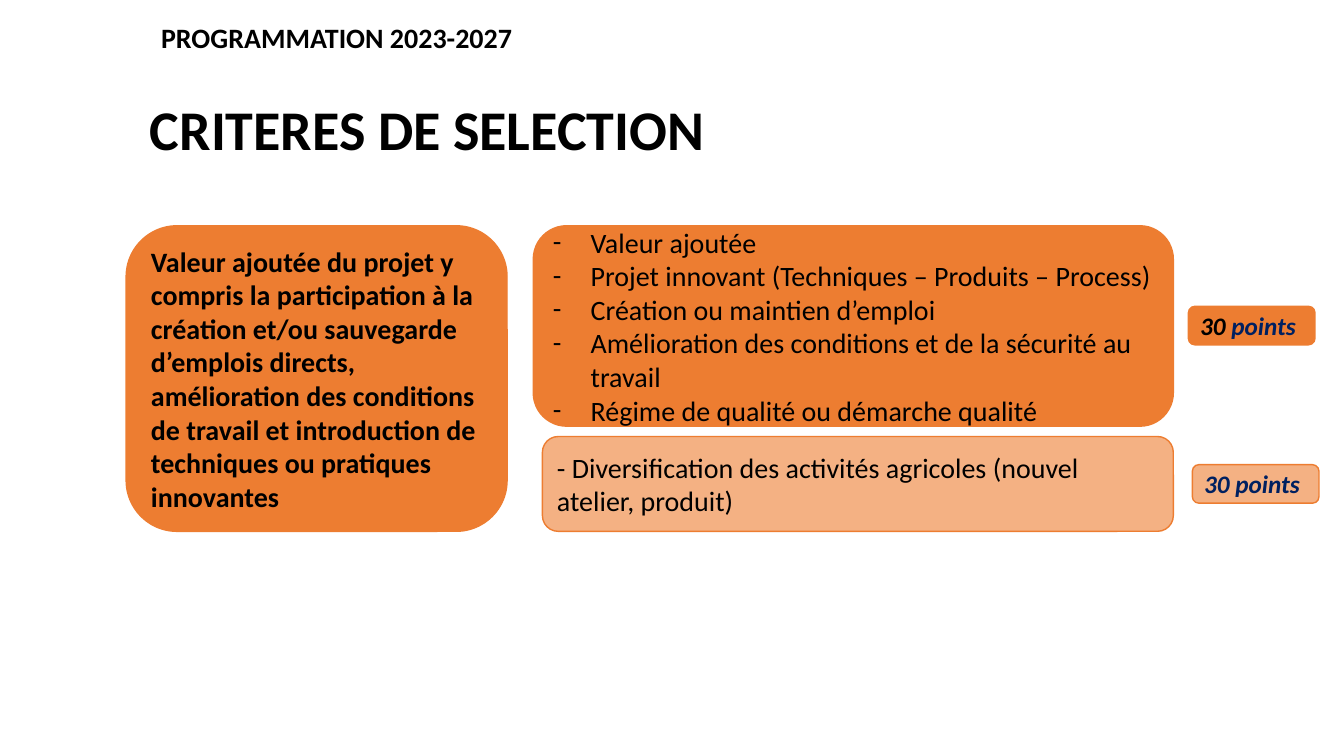
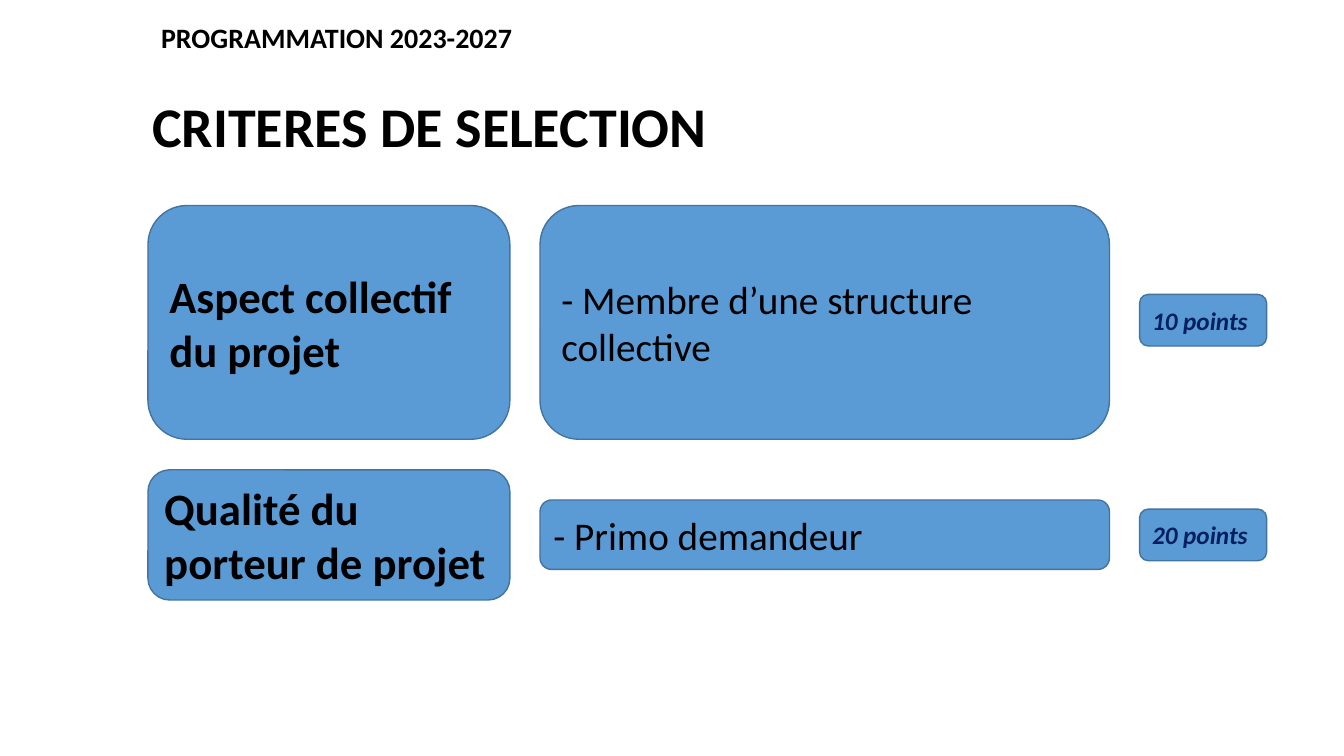
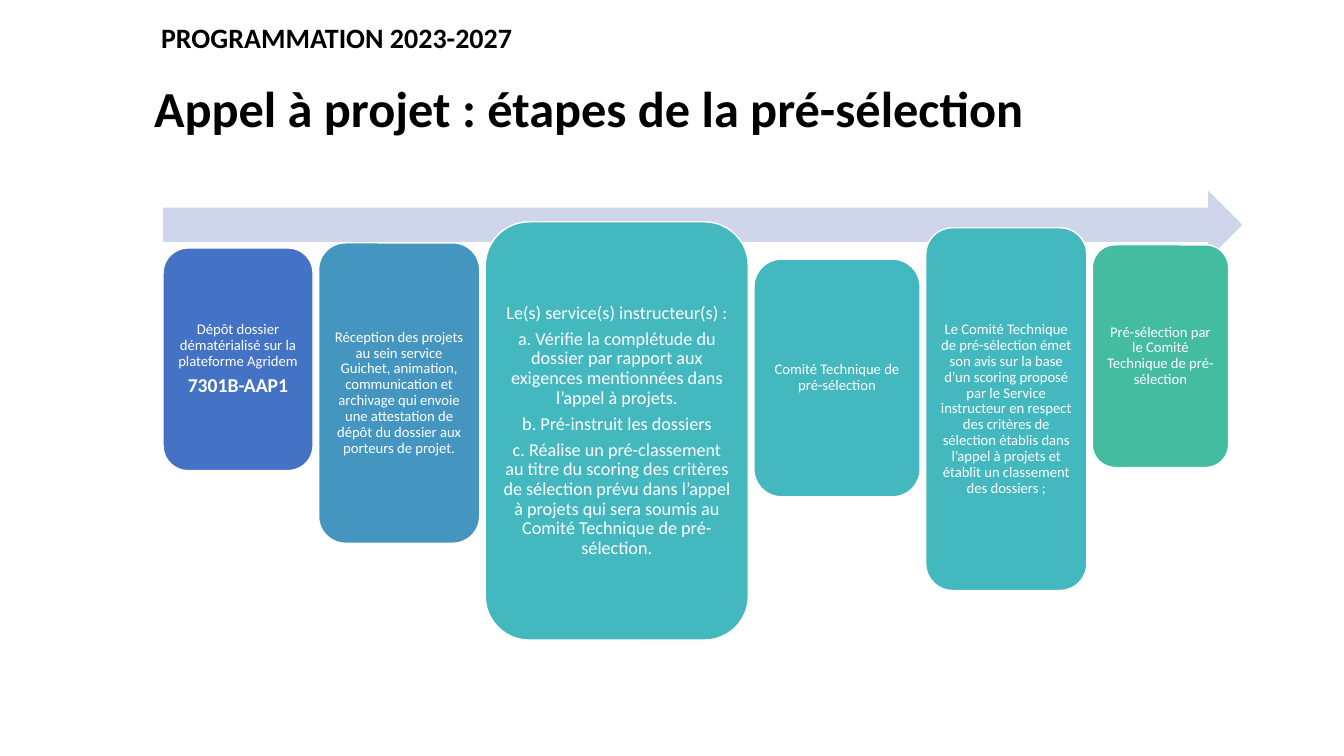
from pptx import Presentation
from pptx.dml.color import RGBColor
from pptx.enum.shapes import MSO_SHAPE
from pptx.enum.text import MSO_ANCHOR, MSO_AUTO_SIZE, PP_ALIGN
from pptx.oxml.ns import qn
from pptx.util import Cm, Pt
from lxml.etree import SubElement

FONT = "Calibri"
BLACK, WHITE, NAVY = "000000", "FFFFFF", "002060"
ORANGE, LIGHT_ORANGE = "ED7D31", "F4B183"
BLUE, DARK_BLUE = "5B9BD5", "43739E"
ARROW_GREY, TEAL = "CFD5EA", "43B8BF"

HEADER = "PROGRAMMATION 2023-2027"
CRITERIA_TITLE = "CRITERES DE SELECTION"

BODY = {"size": 20, "color": BLACK}
BOLD = {**BODY, "bold": True}
BADGE = {"size": 18, "color": NAVY, "bold": True, "italic": True}
STEP = {"size": 10.5, "color": WHITE}


def color(hex_value):
    return RGBColor.from_string(hex_value)


class Deck:
    """Holds the presentation, its shared style and the current slide."""

    def __init__(self):
        self.presentation = Presentation()
        self.presentation.slide_width = Cm(33.87)
        self.presentation.slide_height = Cm(19.05)
        self.slide = None

    def new_slide(self, title, box, size=40, align=PP_ALIGN.CENTER):
        layout = self.presentation.slide_layouts[5]
        self.slide = self.presentation.slides.add_slide(layout)
        self.header()
        placeholder = self.slide.shapes.title
        left, top, width, height = map(Cm, box)
        place = {"left": left, "top": top, "width": width, "height": height}
        for name, value in place.items():
            setattr(placeholder, name, value)
        self.fill_text(placeholder, [title], {**BOLD, "size": size}, align=align,
                       wrap=align != PP_ALIGN.CENTER)

    def header(self):
        shape = self.slide.shapes.add_textbox(Cm(3.81), Cm(0.38), Cm(9.8), Cm(1.12))
        self.fill_text(shape, [HEADER], BOLD)

    def fill_text(self, shape, paragraphs, style, align=PP_ALIGN.LEFT, wrap=True,
                  inset=None, spacing=None, bullet=None):
        """Each paragraph is a string or a list of (text, style changes) runs."""
        frame = shape.text_frame
        settings = {"auto_size": MSO_AUTO_SIZE.NONE, "word_wrap": wrap,
                    "vertical_anchor": MSO_ANCHOR.MIDDLE}
        if inset is not None:
            for side in ("left", "top", "right", "bottom"):
                settings[f"margin_{side}"] = Cm(inset)
        for name, value in settings.items():
            setattr(frame, name, value)
        for index, content in enumerate(paragraphs):
            paragraph = frame.add_paragraph() if index else frame.paragraphs[0]
            paragraph.alignment = align
            if spacing:
                paragraph.line_spacing = spacing
                paragraph.space_after = Pt(round(0.35 * style["size"], 1))
            if bullet:
                self.bullet(paragraph, bullet)
            runs = [(content, {})] if isinstance(content, str) else content
            for text, changes in runs:
                self.add_run(paragraph, text, {**style, **changes})

    def bullet(self, paragraph, character):
        properties = paragraph._p.get_or_add_pPr()
        properties.set("marL", str(Cm(0.95)))
        properties.set("indent", str(-Cm(0.95)))
        SubElement(properties, qn("a:buFont")).set("typeface", FONT)
        SubElement(properties, qn("a:buChar")).set("char", character)

    def add_run(self, paragraph, text, style):
        run = paragraph.add_run()
        run.text = text
        values = {"name": FONT, "size": Pt(style["size"]),
                  "bold": style.get("bold", False),
                  "italic": style.get("italic", False)}
        for name, value in values.items():
            setattr(run.font, name, value)
        run.font.color.rgb = color(style["color"])

    def shape(self, kind, box, fill, line=None):
        shape = self.slide.shapes.add_shape(kind, *map(Cm, box))
        shape.shadow.inherit = False
        shape.fill.solid()
        shape.fill.fore_color.rgb = color(fill)
        if line:
            shape.line.color.rgb = color(line)
            shape.line.width = Pt(1)
        else:
            shape.line.fill.background()
        return shape

    def card(self, box, paragraphs, style, fill, line, **layout):
        shape = self.shape(MSO_SHAPE.ROUNDED_RECTANGLE, box, fill, line)
        self.fill_text(shape, paragraphs, style, **layout)


def added_value_slide(deck):
    deck.new_slide(CRITERIA_TITLE, (3.45, 2.24, 14.63, 1.96))
    deck.card((3.18, 5.69, 9.6, 7.7), [
        "Valeur ajoutée du projet y compris la participation à la création et/ou "
        "sauvegarde d’emplois directs, amélioration des conditions de travail et "
        "introduction de techniques ou pratiques innovantes",
    ], BOLD, ORANGE, ORANGE)
    deck.card((13.44, 5.69, 16.13, 5.05), [
        "Valeur ajoutée",
        "Projet innovant (Techniques – Produits – Process)",
        "Création ou maintien d’emploi",
        "Amélioration des conditions et de la sécurité au travail",
        "Régime de qualité ou démarche qualité",
    ], BODY, ORANGE, ORANGE, bullet="-")
    deck.card((13.67, 11, 15.9, 2.39), [
        "- Diversification des activités agricoles (nouvel atelier, produit)",
    ], BODY, LIGHT_ORANGE, ORANGE)
    deck.card((29.95, 7.72, 3.19, 0.97),
              [[("30 ", {"color": BLACK}), ("points", {})]], BADGE, ORANGE, ORANGE)
    deck.card((30.05, 11.71, 3.19, 0.97), ["30 points"], BADGE, LIGHT_ORANGE, ORANGE)


def project_holder_slide(deck):
    deck.new_slide(CRITERIA_TITLE, (3.51, 2.18, 14.63, 1.96))
    gap = 0.76
    widths = (9.12, 14.35, 3.2)
    styles = ({**BOLD, "size": 32}, {**BODY, "size": 28}, BADGE)
    rows = [
        [("Aspect collectif du projet", 5.18, 5.89),
         ("- Membre d’une structure collective", 5.18, 5.89),
         ("10 points", 7.42, 1.3)],
        [("Qualité du porteur de projet", 11.84, 3.28),
         ("- Primo demandeur", 12.6, 1.75),
         ("20 points", 12.83, 1.3)],
    ]
    for row in rows:
        left = 3.73
        for (text, top, height), width, style in zip(row, widths, styles):
            deck.card((left, top, width, height), [text], style, BLUE, DARK_BLUE)
            left += width + gap


def steps_slide(deck):
    deck.new_slide("Appel à projet : étapes de la pré-sélection",
                   (3.63, 1.8, 25.27, 1.8), size=36, align=PP_ALIGN.LEFT)
    left, gap = 4.11, 0.14
    deck.shape(MSO_SHAPE.RIGHT_ARROW, (left, 4.8, 27.2, 1.73), ARROW_GREY)
    steps = [
        (6.25, 3.78, 5.61, "4472C4", 10.5, [
            "Dépôt dossier dématérialisé sur la plateforme Agridem",
            [("7301B-AAP1", {"size": 14, "bold": True})]]),
        (6.12, 4.06, 7.57, "4496C1", 10.5, [
            "Réception des projets au sein service Guichet, animation, communication "
            "et archivage qui envoie une attestation de dépôt du dossier aux porteurs "
            "de projet."]),
        (5.59, 6.63, 10.54, TEAL, 13, [
            "Le(s) service(s) instructeur(s) :",
            "a. Vérifie la complétude du dossier par rapport aux exigences "
            "mentionnées dans l’appel à projets.",
            "b. Pré-instruit les dossiers",
            "c. Réalise un pré-classement au titre du scoring des critères de "
            "sélection prévu dans l’appel à projets qui sera soumis au Comité "
            "Technique de pré-sélection."]),
        (6.53, 4.19, 5.99, TEAL, 10.5, ["Comité Technique de pré-sélection"]),
        (5.74, 4.06, 9.14, TEAL, 10.5, [
            "Le Comité Technique de pré-sélection émet son avis sur la base d’un "
            "scoring proposé par le Service instructeur en respect des critères de "
            "sélection établis dans l’appel à projets et établit un classement des "
            "dossiers ;"]),
        (6.17, 3.43, 5.61, "43BCA0", 10.5, [
            "Pré-sélection par le Comité Technique de pré-sélection"]),
    ]
    for top, width, height, fill, size, paragraphs in steps:
        deck.card((left, top, width, height), paragraphs, {**STEP, "size": size},
                  fill, WHITE, align=PP_ALIGN.CENTER, inset=0.12, spacing=0.9)
        left += width + gap


def main():
    deck = Deck()
    added_value_slide(deck)
    project_holder_slide(deck)
    steps_slide(deck)
    deck.presentation.save("out.pptx")


if __name__ == "__main__":
    main()
